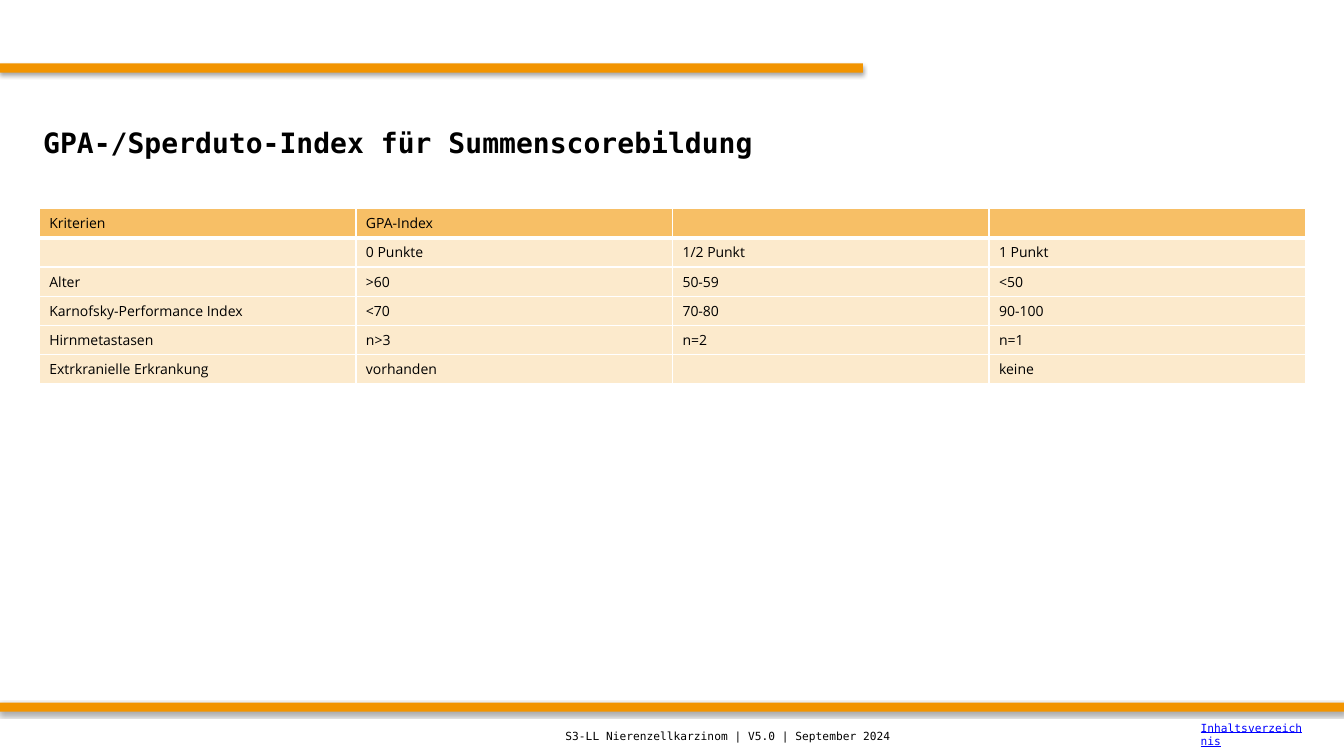
from dataclasses import dataclass

from lxml import etree
from pptx import Presentation
from pptx.dml.color import RGBColor
from pptx.enum import shapes, text
from pptx.oxml import ns
from pptx.util import Inches, Pt


@dataclass(frozen=True)
class Theme:
    accent: str = "F29400"
    header_fill: str = "F7BF66"
    body_fill: str = "FCEACC"
    border: str = "FFFFFF"
    ink: str = "000000"
    link: str = "0000FF"
    mono: str = "DejaVu Sans Mono"
    sans: str = "Open Sans"
    title_size: int = 20
    table_size: int = 10
    footer_size: int = 8


THEME = Theme()

CRITERIA = [
    ["Kriterien", "GPA-Index", "", ""],
    ["", "0 Punkte", "1/2 Punkt", "1 Punkt"],
    ["Alter", ">60", "50-59", "<50"],
    ["Karnofsky-Performance Index", "<70", "70-80", "90-100"],
    ["Hirnmetastasen", "n>3", "n=2", "n=1"],
    ["Extrkranielle Erkrankung", "vorhanden", "", "keine"],
]


def add_child(parent, tag, **attributes):
    child = etree.SubElement(parent, ns.qn(tag))
    for name, value in attributes.items():
        child.set(name, str(value))
    return child


def style_font(font, family, size, color=THEME.ink, bold=False, underline=False):
    font.name = family
    font.size = Pt(size)
    font.color.rgb = RGBColor.from_string(color)
    font.bold = bold
    font.underline = underline


def add_bar(slide, top, width):
    """Draw an accent bar from the left edge with a soft shadow below."""
    bar = slide.shapes.add_shape(
        shapes.MSO_SHAPE.RECTANGLE, 0, Inches(top), Inches(width), Inches(0.09))
    bar.fill.solid()
    bar.fill.fore_color.rgb = RGBColor.from_string(THEME.accent)
    bar.line.fill.background()
    bar.shadow.inherit = False
    effects = bar._element.spPr.find(ns.qn("a:effectLst"))
    shadow = add_child(effects, "a:outerShdw", blurRad=Pt(3.1), dist=Pt(1.8),
                       dir=90 * 60000, rotWithShape=0)
    shade = add_child(shadow, "a:srgbClr", val=THEME.ink)
    add_child(shade, "a:alpha", val=35000)


def add_label(slide, words, left, top, width, height, size, **style):
    box = slide.shapes.add_textbox(
        Inches(left), Inches(top), Inches(width), Inches(height))
    frame = box.text_frame
    frame.word_wrap = True
    frame.vertical_anchor = text.MSO_ANCHOR.MIDDLE
    frame.text = words
    style_font(frame.paragraphs[0].font, THEME.mono, size, **style)


def add_borders(cell, bottom_width):
    properties = cell._tc.get_or_add_tcPr()
    for side, width in (("L", 1), ("R", 1), ("T", 1), ("B", bottom_width)):
        line = add_child(properties, f"a:ln{side}", w=Pt(width))
        add_child(add_child(line, "a:solidFill"), "a:srgbClr", val=THEME.border)


def fill_cell(cell, words, is_header):
    add_borders(cell, 3 if is_header else 1)
    cell.fill.solid()
    cell.fill.fore_color.rgb = RGBColor.from_string(
        THEME.header_fill if is_header else THEME.body_fill)
    cell.text = words
    paragraph = cell.text_frame.paragraphs[0]
    paragraph.space_after = Pt(5)
    style_font(paragraph.font, THEME.sans, THEME.table_size)
    if not words:
        # Keeps an empty cell from stretching its row
        add_child(paragraph._p, "a:endParaRPr", sz=THEME.table_size * 100)


def add_criteria_table(slide, left, top, column_width, row_height):
    row_count, column_count = len(CRITERIA), len(CRITERIA[0])
    table = slide.shapes.add_table(
        row_count, column_count, Inches(left), Inches(top),
        Inches(column_width * column_count), Inches(row_height * row_count)).table
    for row, values in enumerate(CRITERIA):
        for column, words in enumerate(values):
            fill_cell(table.cell(row, column), words, is_header=row == 0)


def main():
    deck = Presentation()
    deck.slide_width, deck.slide_height = Inches(13.33), Inches(7.5)
    slide = deck.slides.add_slide(deck.slide_layouts[6])

    add_bar(slide, 0.63, 8.56)
    add_bar(slide, 6.97, 13.33)
    add_label(slide, "GPA-/Sperduto-Index für Summenscorebildung",
              0.33, 0.83, 12.67, 1.17, THEME.title_size, bold=True)
    add_criteria_table(slide, 0.39, 2.07, 3.14, 0.29)
    add_label(slide, "S3-LL Nierenzellkarzinom | V5.0 | September 2024",
              5.51, 7.11, 5.51, 0.39, THEME.footer_size)
    add_label(slide, "Inhaltsverzeichnis", 11.81, 7.09, 1.22, 0.39,
              THEME.footer_size, color=THEME.link, underline=True)

    deck.save("out.pptx")


if __name__ == "__main__":
    main()
